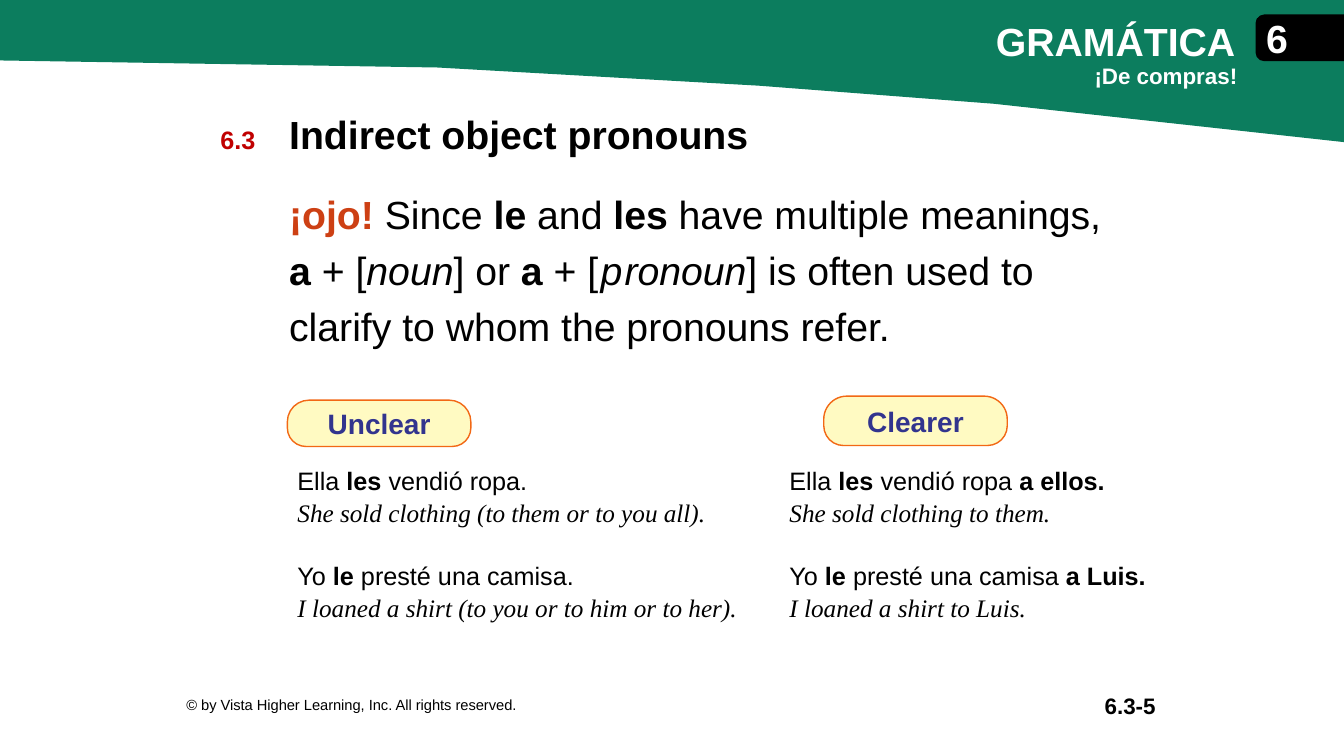
from pptx import Presentation
from pptx.dml.color import RGBColor
from pptx.enum.shapes import MSO_SHAPE
from pptx.enum.text import MSO_ANCHOR, PP_ALIGN
from pptx.util import Inches, Pt

LEFT, CENTER, RIGHT = PP_ALIGN.LEFT, PP_ALIGN.CENTER, PP_ALIGN.RIGHT
TOP, MIDDLE = MSO_ANCHOR.TOP, MSO_ANCHOR.MIDDLE
TAB = MSO_SHAPE.ROUND_2_SAME_RECTANGLE

THEME = {
    "sans": "Arial", "serif": "Times New Roman",
    "black": "000000", "white": "FFFFFF", "green": "0C7D5E", "red": "C00000",
    "orange": "CD4014", "pill": "FFFAC2", "pill_line": "F26815", "indigo": "32348E",
    "head": 28, "label": 20, "text": 18, "small": 16, "fine": 10.5,
}

# Content: a run is (text, format)
B, I, PLAIN = {"bold": True}, {"italic": True}, {}
BANNER = [(13.33, 1.41), (9.86, 1.03), (7.52, 0.85), (4.34, 0.67),
          (0, 0.6), (0, 0), (13.33, 0)]
# text, box, size, colour, bold, alignment, anchor
LABELS = [
    ("6.3", (1.95, 1.18, 0.82, 0.4), "text", "red", True, CENTER, MIDDLE),
    ("Indirect object pronouns", (2.77, 1.05, 8.28, 0.57), "head", "black", True, LEFT, TOP),
    ("GRAMÁTICA", (9.78, 0.12, 3.55, 0.57), "head", "white", True, LEFT, TOP),
    ("¡De compras!", (10.59, 0.57, 1.78, 0.37), "small", "white", True, RIGHT, TOP),
    ("6", (12.49, 0.18, 0.35, 0.4), "head", "white", True, CENTER, MIDDLE),
    ("6.3-5", (8.55, 6.82, 3.01, 0.35), "small", "black", True, RIGHT, MIDDLE),
    ("© by Vista Higher Learning, Inc. All rights reserved.",
     (1.75, 6.82, 6.45, 0.35), "fine", "black", False, LEFT, MIDDLE),
]
NOTE = [
    ("¡ojo! ", {"bold": True, "color": "orange"}), ("Since ", PLAIN), ("le", B),
    (" and ", PLAIN), ("les", B), (" have multiple meanings, ", PLAIN), ("a", B),
    (" + [", PLAIN), ("noun", I), ("] or ", PLAIN), ("a", B), (" + ", PLAIN),
    ("[", {"spacing": 1.6}), ("p", {"italic": True, "spacing": 1.6}), ("ronoun", I),
    ("] is often used to clarify to whom the pronouns refer.", PLAIN),
]
# Each column holds pairs of a Spanish sentence and its English meaning
EXAMPLES = [
    [([("Ella", PLAIN), (" les ", B), ("vendió ropa.", PLAIN)],
      "She sold clothing (to them or to you all)."),
     ([("Yo ", PLAIN), ("le ", B), ("presté una camisa.", PLAIN)],
      "I loaned a shirt (to you or to him or to her).")],
    [([("Ella", PLAIN), (" les ", B), ("vendió ropa ", PLAIN), ("a ellos.", B)],
      "She sold clothing to them."),
     ([("Yo ", PLAIN), ("le ", B), ("presté una camisa ", PLAIN), ("a Luis.", B)],
      "I loaned a shirt to Luis.")],
]
COLUMN_WIDTHS = [4.88, 3.98]
PILLS = [("Unclear", (2.85, 3.97, 1.82, 0.46)), ("Clearer", (8.17, 3.93, 1.82, 0.49))]


def rgb(name):
    return RGBColor.from_string(THEME[name])


def inches(box):
    return [Inches(v) for v in box]


def add_runs(p, runs, size, color="black"):
    for text, style in runs:
        r = p.add_run()
        r.text = text
        values = {"name": THEME[style.get("font", "sans")], "size": Pt(THEME[size]),
                  "bold": style.get("bold", False), "italic": style.get("italic", False)}
        for key, value in values.items():
            setattr(r.font, key, value)
        r.font.color.rgb = rgb(style.get("color", color))
        if "spacing" in style:
            r.font._element.set("spc", str(round(style["spacing"] * 100)))


def set_text(tf, runs, size, color="black", align=LEFT, anchor=TOP):
    tf.word_wrap = True
    tf.vertical_anchor = anchor
    if align == CENTER:
        tf.margin_left = tf.margin_right = 0
    p = tf.paragraphs[0]
    p.alignment = align
    add_runs(p, runs, size, color)
    return p


def add_tab(s, box, fill, line, corners):
    sp = s.shapes.add_shape(TAB, *inches(box))
    sp.shadow.inherit = False
    sp.fill.solid()
    sp.fill.fore_color.rgb = rgb(fill)
    sp.line.color.rgb = rgb(line)
    sp.line.width = Pt(1)
    for i, corner in enumerate(corners):
        sp.adjustments[i] = corner
    return sp


def main():
    prs = Presentation()
    prs.slide_width, prs.slide_height = Inches(13.33), Inches(7.5)
    s = prs.slides.add_slide(prs.slide_layouts[6])

    # Green banner and black chapter tab
    points = [inches(point) for point in BANNER]
    builder = s.shapes.build_freeform(*points[0])
    builder.add_line_segments(points[1:], close=True)
    banner = builder.convert_to_shape()
    banner.shadow.inherit = False
    banner.fill.solid()
    banner.fill.fore_color.rgb = rgb("green")
    banner.line.fill.background()
    add_tab(s, (12.67, -0.06, 0.45, 0.87), "black", "black", (0.178, 0)).rotation = 270

    # Headings and footer
    for text, box, size, color, bold, align, anchor in LABELS:
        tf = s.shapes.add_textbox(*inches(box)).text_frame
        set_text(tf, [(text, {"bold": bold})], size, color, align, anchor)

    # Explanation
    tf = s.shapes.add_textbox(*inches((2.77, 1.75, 8.53, 1.76))).text_frame
    set_text(tf, NOTE, "head").line_spacing = Pt(40)

    # Example table
    box = inches((2.85, 4.59, sum(COLUMN_WIDTHS), 1.77))
    table = s.shapes.add_table(1, len(EXAMPLES), *box).table
    table.first_row = table.horz_banding = False
    for i, (pairs, width) in enumerate(zip(EXAMPLES, COLUMN_WIDTHS)):
        table.columns[i].width = Inches(width)
        cell = table.cell(0, i)
        cell.fill.background()
        tf = cell.text_frame
        for n, (spanish, english) in enumerate(pairs):
            p = tf.add_paragraph() if n else tf.paragraphs[0]
            if n:
                p.space_before = Pt(22)
            add_runs(p, spanish, "text")
            meaning = tf.add_paragraph()
            add_runs(meaning, [(english, {"font": "serif", "italic": True})], "text")
            p.space_after = meaning.space_after = Pt(3)

    # Column labels
    for text, box in PILLS:
        sp = add_tab(s, box, "pill", "pill_line", (0.467, 0.401))
        set_text(sp.text_frame, [(text, B)], "label", "indigo", CENTER, MIDDLE)

    prs.save("out.pptx")


if __name__ == "__main__":
    main()
